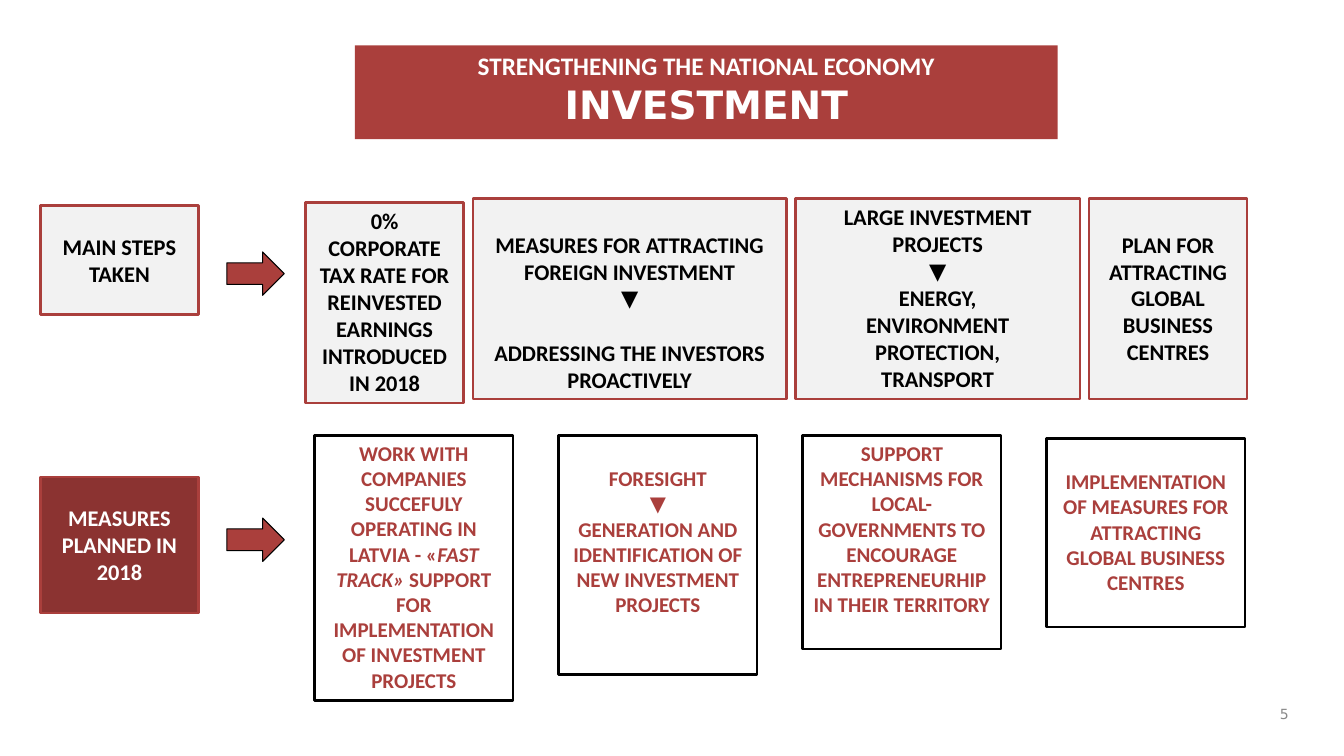
from pptx import Presentation
from pptx.dml.color import RGBColor
from pptx.enum.shapes import MSO_SHAPE as Kind
from pptx.enum.text import MSO_ANCHOR as Anchor, MSO_AUTO_SIZE as Fit, PP_ALIGN as Align
from pptx.util import Inches, Pt

RED = RGBColor(0xAA, 0x3F, 0x3C)
DARK = RGBColor(0x8B, 0x33, 0x31)
PALE = RGBColor(0xF2, 0xF2, 0xF2)
GRAY = RGBColor(0x89, 0x89, 0x89)
BLACK = RGBColor(0, 0, 0)
WHITE = RGBColor(255, 255, 255)
SANS, WIDE = "Calibri", "DejaVu Sans"

TITLE = [("STRENGTHENING THE NATIONAL ECONOMY", 18, SANS), ("INVESTMENT", 27.9, WIDE)]
PAGE = "5"

# Row heads: top, height, fill, text colour, arrow top, lines
HEADS = [
    (2.04, 1.08, PALE, BLACK, 2.5, ["MAIN STEPS TAKEN"]),
    (4.73, 1.35, DARK, WHITE, 5.14, ["MEASURES PLANNED IN", "2018"]),
]
# Steps: top, width, text inset, lines; an empty line stands for a wider gap
STEPS = [
    (2.01, 1.57, 0.05, ["0% CORPORATE TAX RATE FOR REINVESTED EARNINGS INTRODUCED IN 2018"]),
    (1.97, 3.11, 0.32, ["MEASURES FOR ATTRACTING FOREIGN INVESTMENT", "▼", "",
                        "ADDRESSING THE INVESTORS", "PROACTIVELY"]),
    (1.97, 2.82, 0.05, ["LARGE INVESTMENT PROJECTS", "▼", "ENERGY,",
                        "ENVIRONMENT PROTECTION,", "TRANSPORT"]),
    (1.97, 1.57, 0.32, ["PLAN FOR ATTRACTING GLOBAL BUSINESS CENTRES"]),
]
# Plans: top, height, text inset, lines; a tuple alternates upright and italic
PLANS = [
    (4.32, 2.63, 0.05, [("WORK WITH COMPANIES SUCCEFULY OPERATING IN LATVIA - «",
                         "FAST TRACK» ", "SUPPORT FOR IMPLEMENTATION OF INVESTMENT PROJECTS")]),
    (4.32, 2.37, 0.3, ["FORESIGHT", "▼",
                       "GENERATION AND IDENTIFICATION OF NEW INVESTMENT PROJECTS"]),
    (4.32, 2.12, 0.05, ["SUPPORT MECHANISMS FOR LOCAL-GOVERNMENTS TO ENCOURAGE "
                        "ENTREPRENEURHIP IN THEIR TERRITORY"]),
    (4.35, 1.87, 0.3, ["IMPLEMENTATION OF MEASURES FOR ATTRACTING GLOBAL BUSINESS CENTRES"]),
]
HEAD_X, HEAD_W, ARROW_X = 0.4, 1.57, 2.25
STEP_X, STEP_H, STEP_GAP = 3.03, 1.99, 0.09
PLAN_X, PLAN_W, PLAN_STEP = 3.12, 1.97, 2.42


def style(para, size, color, face=SANS, bold=True, align=Align.CENTER):
    """Set the font and alignment of a paragraph."""
    para.alignment = align
    font = para.font
    font.name, font.size, font.bold = face, Pt(size), bold
    font.color.rgb = color


def draw(slide, kind, at, fill, line, width):
    """Add a flat shape with a fill and an outline."""
    shape = slide.shapes.add_shape(kind, *map(Inches, at))
    shape.shadow.inherit = False
    shape.fill.solid()
    shape.fill.fore_color.rgb = fill
    shape.line.color.rgb = line
    shape.line.width = Pt(width)
    return shape


def box(slide, at, fill, line, inset, lines, size, color):
    """Add a framed box of centred bold lines."""
    frame = draw(slide, Kind.RECTANGLE, at, fill, line, 1.75).text_frame
    frame.word_wrap = True
    frame.vertical_anchor = Anchor.TOP
    frame.margin_top = Inches(inset)
    para, gap = frame.paragraphs[0], False
    for num, text in enumerate(lines):
        if not text:
            gap = True
            continue
        if num:
            para = frame.add_paragraph()
        if gap:
            para.space_before = Pt(size * 1.22)
            gap = False
        parts = text if isinstance(text, tuple) else (text,)
        for pos, part in enumerate(parts):
            run = para.add_run()
            run.text = part
            if pos % 2:
                run.font.italic = True
        style(para, size, color)


def banner(slide):
    """Fill the title placeholder."""
    title = slide.shapes.title
    title.left, title.top, title.width, title.height = map(Inches, (3.52, 0.45, 6.97, 0.93))
    title.fill.solid()
    title.fill.fore_color.rgb = RED
    frame = title.text_frame
    frame.auto_size = Fit.NONE
    frame.vertical_anchor = Anchor.TOP
    frame.text = "\n".join(text for text, _, _ in TITLE)
    for para, (_, size, face) in zip(frame.paragraphs, TITLE):
        para.space_before = Pt(0)
        style(para, size, WHITE, face)


def main():
    """Build the slide and save it."""
    deck = Presentation()
    deck.slide_width, deck.slide_height = Inches(13.33), Inches(7.5)
    slide = deck.slides.add_slide(deck.slide_layouts[5])
    banner(slide)
    for top, high, fill, color, mid, lines in HEADS:
        box(slide, (HEAD_X, top, HEAD_W, high), fill, RED, 0.27, lines, 16, color)
        draw(slide, Kind.RIGHT_ARROW, (ARROW_X, mid, 0.57, 0.43), RED, BLACK, 0.75)
    left = STEP_X
    for top, wide, inset, lines in STEPS:
        box(slide, (left, top, wide, STEP_H), PALE, RED, inset, lines, 16, BLACK)
        left += wide + STEP_GAP
    for col, (top, high, inset, lines) in enumerate(PLANS):
        at = PLAN_X + col * PLAN_STEP, top, PLAN_W, high
        box(slide, at, WHITE, BLACK, inset, lines, 15, RED)
    frame = slide.shapes.add_textbox(*map(Inches, (12.44, 6.92, 0.44, 0.33))).text_frame
    frame.word_wrap = True
    frame.vertical_anchor = Anchor.MIDDLE
    frame.text = PAGE
    style(frame.paragraphs[0], 10, GRAY, WIDE, False, Align.RIGHT)
    deck.save("out.pptx")


if __name__ == "__main__":
    main()
